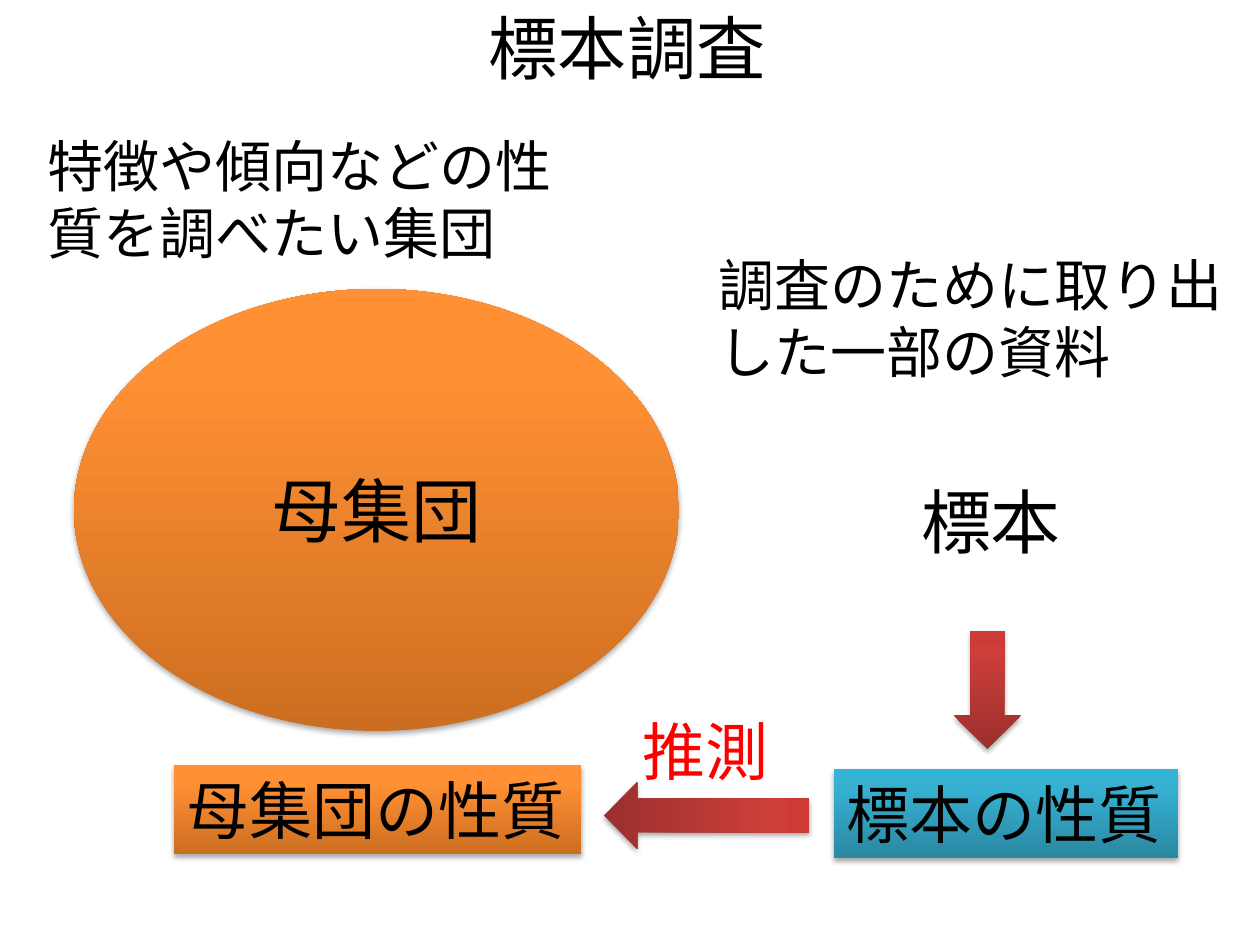
from copy import deepcopy
from dataclasses import dataclass
from typing import Optional

from lxml.etree import SubElement
from pptx import Presentation
from pptx.dml.color import RGBColor
from pptx.enum.shapes import MSO_SHAPE as Preset
from pptx.enum.text import MSO_ANCHOR as Anchor, MSO_AUTO_SIZE as AutoSize, PP_ALIGN as Align
from pptx.oxml.ns import qn
from pptx.util import Emu, Pt

PX_PER_INCH = 126
FONT = "Calibri"
BLACK = RGBColor(0x00, 0x00, 0x00)
BRIGHT_RED = RGBColor(0xFF, 0x00, 0x00)
ORANGE = (RGBColor(0xCC, 0x6E, 0x20), RGBColor(0xFF, 0x90, 0x34), RGBColor(0xFF, 0x91, 0x36))
TEAL = (RGBColor(0x2A, 0x88, 0xA2), RGBColor(0x37, 0xB1, 0xD2), RGBColor(0x34, 0xB4, 0xD6))
RED = (RGBColor(0x9C, 0x2F, 0x2D), RGBColor(0xCB, 0x3E, 0x3A), RGBColor(0xCE, 0x3B, 0x37))
STOP_POSITIONS = (0, 0.8, 1)


@dataclass(frozen=True)
class Area:
    left: int
    top: int
    width: int
    height: int


@dataclass(frozen=True)
class Label:
    text: str
    size: float
    align: Align = Align.CENTER
    color: RGBColor = BLACK
    anchor: Anchor = Anchor.TOP
    wrap: bool = False
    space_before: float = 0


@dataclass(frozen=True)
class Figure:
    preset: Preset
    area: Area
    colors: tuple[RGBColor, ...]
    label: Optional[Label] = None
    rotation: int = 0


@dataclass(frozen=True)
class Caption:
    area: Area
    label: Label


TITLE = Caption(Area(60, 3, 1134, 87), Label("標本調査", 39.6, anchor=Anchor.MIDDLE, wrap=True))

FIGURES = (
    Figure(Preset.OVAL, Area(74, 289, 605, 442), ORANGE,
           Label("母集団", 40, anchor=Anchor.MIDDLE, wrap=True)),
    Figure(Preset.DOWN_ARROW, Area(954, 631, 67, 118), RED),
    Figure(Preset.RECTANGLE, Area(834, 769, 344, 89), TEAL, Label("標本の性質", 36, Align.LEFT)),
    Figure(Preset.RECTANGLE, Area(174, 765, 407, 89), ORANGE, Label("母集団の性質", 36, Align.LEFT)),
    Figure(Preset.DOWN_ARROW, Area(673, 713, 67, 205), RED, rotation=90),
)

CAPTIONS = (
    Caption(Area(35, 125, 546, 159),
            Label("特徴や傾向などの性質を調べたい集団", 32, Align.LEFT, wrap=True, space_before=6.4)),
    Caption(Area(706, 244, 546, 159),
            Label("調査のために取り出した一部の資料", 32, Align.LEFT, wrap=True, space_before=6.4)),
    Caption(Area(908, 472, 166, 97), Label("標本", 40)),
    Caption(Area(630, 706, 152, 89), Label("推測", 36, color=BRIGHT_RED)),
)


def px(length: int) -> Emu:
    return Emu(round(length * 914400 / PX_PER_INCH))


def bounds(area: Area) -> tuple[Emu, ...]:
    return px(area.left), px(area.top), px(area.width), px(area.height)


def write_label(box, label: Label) -> None:
    frame = box.text_frame
    frame.word_wrap = label.wrap
    frame.auto_size = AutoSize.NONE if label.wrap else AutoSize.SHAPE_TO_FIT_TEXT
    frame.vertical_anchor = label.anchor
    para = frame.paragraphs[0]
    para.alignment = label.align
    para.space_before = Pt(label.space_before)
    span = para.add_run()
    span.text = label.text
    span.font.name = FONT
    span.font.size = Pt(label.size)
    span.font.color.rgb = label.color


def fill_gradient(box, colors: tuple[RGBColor, ...]) -> None:
    box.fill.gradient()
    box.fill.gradient_angle = 90
    stop_list = box._element.spPr.find(qn("a:gradFill")).find(qn("a:gsLst"))
    stop_list.append(deepcopy(stop_list[0]))
    for stop, position, color in zip(box.fill.gradient_stops, STOP_POSITIONS, colors):
        stop.position = position
        stop.color.rgb = color


def add_soft_shadow(box) -> None:
    box.shadow.inherit = False
    effects = box._element.spPr.find(qn("a:effectLst"))
    shadow = SubElement(effects, qn("a:outerShdw"), blurRad="40000", dist="23000",
                        dir="5400000", rotWithShape="0")
    color = SubElement(shadow, qn("a:srgbClr"), val="000000")
    SubElement(color, qn("a:alpha"), val="35000")


def draw_figure(page, figure: Figure) -> None:
    box = page.shapes.add_shape(figure.preset, *bounds(figure.area))
    box.rotation = figure.rotation
    box.line.fill.background()
    fill_gradient(box, figure.colors)
    add_soft_shadow(box)
    if figure.label:
        write_label(box, figure.label)


def draw_caption(page, caption: Caption) -> None:
    box = page.shapes.add_textbox(*bounds(caption.area))
    write_label(box, caption.label)


def draw_title(page, caption: Caption) -> None:
    title = page.shapes.title
    title.left, title.top, title.width, title.height = bounds(caption.area)
    write_label(title, caption.label)


def main() -> None:
    deck = Presentation()
    deck.slide_width = px(1260)
    deck.slide_height = px(945)
    page = deck.slides.add_slide(deck.slide_layouts[5])
    draw_title(page, TITLE)
    for figure in FIGURES:
        draw_figure(page, figure)
    for caption in CAPTIONS:
        draw_caption(page, caption)
    deck.save("out.pptx")


if __name__ == "__main__":
    main()
